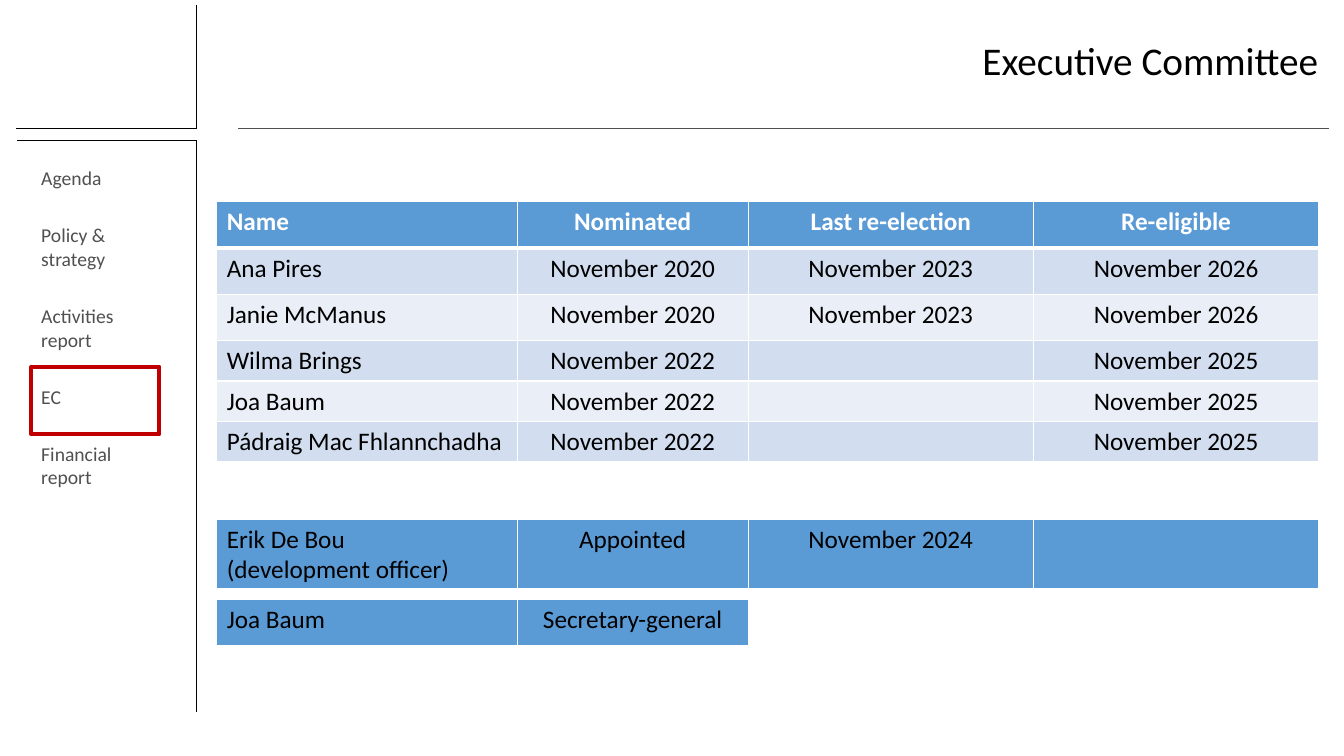
from lxml.etree import SubElement
from pptx import Presentation
from pptx.dml.color import RGBColor
from pptx.enum.shapes import MSO_CONNECTOR, MSO_SHAPE
from pptx.enum.text import MSO_ANCHOR, PP_ALIGN
from pptx.oxml.ns import qn
from pptx.util import Inches, Pt


def color(hex_code):
    return RGBColor.from_string(hex_code)


def write(frame, lines, paragraph_format, font_format, font_color):
    """Fill a text frame with one paragraph per line."""
    for number, line in enumerate(lines):
        paragraph = frame.paragraphs[0] if number == 0 else frame.add_paragraph()
        for name, value in paragraph_format.items():
            if number or name != "space_before":
                setattr(paragraph, name, value)
        if not line:
            continue
        run = paragraph.add_run()
        run.text = line
        run.font.name = "Calibri"
        run.font.color.rgb = color(font_color)
        for name, value in font_format.items():
            setattr(run.font, name, value)


presentation = Presentation()
presentation.slide_width = Inches(13.33)
presentation.slide_height = Inches(7.5)
slide = presentation.slides.add_slide(presentation.slide_layouts[6])

# Grid of 100 columns by 100 rows
COLUMN = presentation.slide_width / 100
ROW = presentation.slide_height / 100
BLACK, GREY, WHITE, BLUE = "000000", "505050", "FFFFFF", "5B9BD5"
MENU_LEFT, MENU_EDGE, CONTENT_LEFT = 2.33, 14.63, 16.13

# Frame lines: start column, start row, end column, end row
frame_lines = [
    (MENU_EDGE, 18.53, MENU_EDGE, 94.13, BLACK),
    (1.28, 18.53, MENU_EDGE, 18.53, BLACK),
    (1.2, 17, MENU_EDGE, 17, BLACK),
    (MENU_EDGE, 0.67, MENU_EDGE, 17, BLACK),
    (17.7, 17, 98.87, 17, GREY),
]
for start_x, start_y, end_x, end_y, line_color in frame_lines:
    connector = slide.shapes.add_connector(
        MSO_CONNECTOR.STRAIGHT,
        int(start_x * COLUMN), int(start_y * ROW),
        int(end_x * COLUMN), int(end_y * ROW),
    )
    connector.line.color.rgb = color(line_color)
    connector.line.width = Pt(0.5)
    SubElement(connector._element.spPr, qn("a:effectLst"))

# Title and side menu
menu_items = ["Agenda", "Policy & strategy", "Activities report", "EC", "Financial report"]
text_boxes = [
    (CONTENT_LEFT, 0.13, 82.67, 16.27, MSO_ANCHOR.MIDDLE, ["Executive Committee"],
     {"alignment": PP_ALIGN.RIGHT, "line_spacing": 0.9}, 28, BLACK),
    (MENU_LEFT, 21.33, 10.05, 52, MSO_ANCHOR.TOP, menu_items,
     {"space_before": Pt(12), "space_after": Pt(12)}, 14, GREY),
]
for left, top, width, height, anchor, lines, paragraph_format, size, text_color in text_boxes:
    box = slide.shapes.add_textbox(
        int(left * COLUMN), int(top * ROW), int(width * COLUMN), int(height * ROW))
    box.text_frame.word_wrap = True
    box.text_frame.vertical_anchor = anchor
    write(box.text_frame, lines, paragraph_format, {"size": Pt(size)}, text_color)

# Marker around the current menu item
marker = slide.shapes.add_shape(
    MSO_SHAPE.RECTANGLE,
    int(MENU_LEFT * COLUMN), int(48.53 * ROW), int(9.53 * COLUMN), int(8.93 * ROW))
marker.shadow.inherit = False
marker.fill.background()
marker.line.color.rgb = color("C00000")
marker.line.width = Pt(3)

# Tables: top row, row heights, fill per row, has header, cell texts
column_widths = [22.36, 17.18, 21.23, 21.23]
members = [
    ["Name", "Nominated", "Last re-election", "Re-eligible"],
    ["Ana Pires", "November 2020", "November 2023", "November 2026"],
    ["Janie McManus", "November 2020", "November 2023", "November 2026"],
    ["Wilma Brings", "November 2022", "", "November 2025"],
    ["Joa Baum", "November 2022", "", "November 2025"],
    ["Pádraig Mac Fhlannchadha", "November 2022", "", "November 2025"],
]
officer = [["Erik De Bou\n(development officer)", "Appointed", "November 2024", ""]]
secretary = [["Joa Baum", "Secretary-general"]]
bands = [BLUE, "D2DEEF", "EAEFF7", "D2DEEF", "EAEFF7", "D2DEEF"]
tables = [
    (26.67, [6.13] * 3 + [5.35] * 3, bands, True, members),
    (68.67, [9.33], [BLUE], False, officer),
    (79.33, [6.27], [BLUE], False, secretary),
]
for top, row_heights, fills, has_header, texts in tables:
    widths = column_widths[:len(texts[0])]
    table = slide.shapes.add_table(
        len(texts), len(widths), int(CONTENT_LEFT * COLUMN), int(top * ROW),
        int(sum(widths) * COLUMN), int(sum(row_heights) * ROW)).table
    table.first_row = has_header
    table.horz_banding = False
    for table_column, width in zip(table.columns, widths):
        table_column.width = int(width * COLUMN)
    for row_number, row_texts in enumerate(texts):
        table.rows[row_number].height = int(row_heights[row_number] * ROW)
        is_header = has_header and row_number == 0
        # The first row is closed by a thick rule
        borders = {"lnL": 1, "lnR": 1, "lnT": 3 if row_number == 1 else 1,
                   "lnB": 3 if row_number == 0 else 1}
        for column_number, text in enumerate(row_texts):
            cell = table.cell(row_number, column_number)
            properties = cell._tc.get_or_add_tcPr()
            for side, points in borders.items():
                border = SubElement(properties, qn(f"a:{side}"), w=str(Pt(points)))
                border_fill = SubElement(border, qn("a:solidFill"))
                SubElement(border_fill, qn("a:srgbClr"), val=WHITE)
            cell.fill.solid()
            cell.fill.fore_color.rgb = color(fills[row_number])
            alignment = PP_ALIGN.CENTER if column_number else PP_ALIGN.LEFT
            write(cell.text_frame, text.split("\n"), {"alignment": alignment},
                  {"size": Pt(18), "bold": is_header}, WHITE if is_header else BLACK)

presentation.save("out.pptx")
